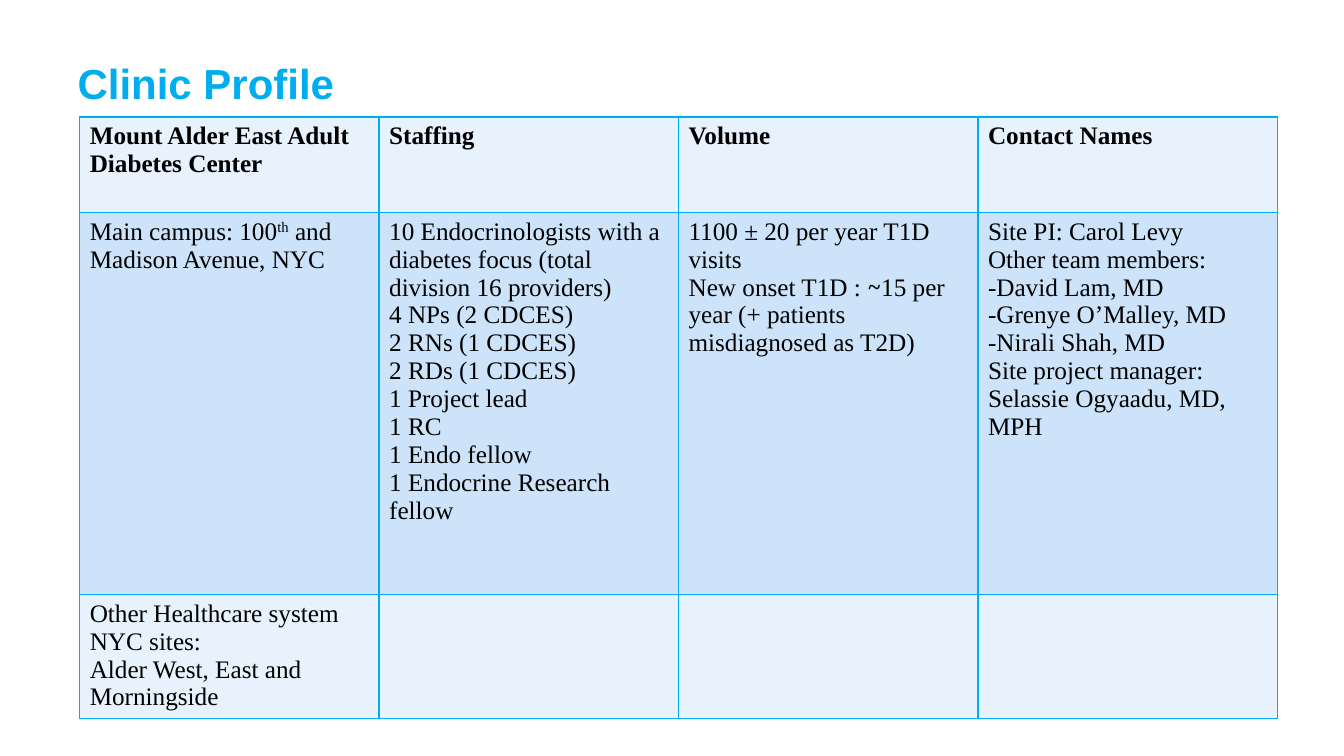
"""Build the clinic profile slide with its staffing, volume and contact table."""
from dataclasses import dataclass

from lxml import etree
from pptx import Presentation
from pptx.dml.color import RGBColor
from pptx.enum.text import MSO_ANCHOR, PP_ALIGN
from pptx.oxml.ns import qn
from pptx.slide import Slide
from pptx.table import _Cell
from pptx.text.text import _Paragraph
from pptx.util import Inches, Pt

LEFT = PP_ALIGN.LEFT
MIDDLE = MSO_ANCHOR.MIDDLE
TITLE_ONLY = 5
BORDER_SIDES = ("a:lnL", "a:lnR", "a:lnT", "a:lnB")


@dataclass(frozen=True)
class Theme:
    accent: str = "00AEEF"
    ink: str = "000000"
    light_band: str = "E7F2FC"
    dark_band: str = "CCE3F9"
    title_font: str = "Arial"
    table_font: str = "Times New Roman"
    title_size: int = 30
    table_size: int = 18
    border: int = 1


@dataclass(frozen=True)
class Span:
    text: str
    superscript: bool = False


@dataclass(frozen=True)
class Row:
    height: float
    fill: str
    cells: tuple[tuple[tuple[Span, ...], ...], ...]
    bold: bool = False


def lines(*texts: str) -> tuple[tuple[Span, ...], ...]:
    return tuple((Span(text),) for text in texts)


THEME = Theme()
COLUMN_WIDTH = 2.97
ROWS = (
    Row(0.95, THEME.light_band, (
        lines("Mount Alder East Adult Diabetes Center"),
        lines("Staffing"),
        lines("Volume"),
        lines("Contact Names"),
    ), bold=True),
    Row(3.79, THEME.dark_band, (
        ((Span("Main campus: 100"), Span("th", superscript=True),
          Span(" and Madison Avenue, NYC")),),
        lines(
            "10 Endocrinologists with a diabetes focus (total division 16 providers)",
            "4 NPs (2 CDCES)",
            "2 RNs (1 CDCES)",
            "2 RDs (1 CDCES)",
            "1 Project lead",
            "1 RC",
            "1 Endo fellow",
            "1 Endocrine Research fellow",
        ),
        lines(
            "1100 ± 20 per year T1D visits",
            "New onset T1D : ⁓15 per year (+ patients misdiagnosed as T2D)",
        ),
        lines(
            "Site PI: Carol Levy",
            "Other team members:",
            "-David Lam, MD",
            "-Grenye O’Malley, MD",
            "-Nirali Shah, MD",
            "Site project manager: Selassie Ogyaadu, MD, MPH",
        ),
    )),
    Row(1.23, THEME.light_band, (
        lines("Other Healthcare system NYC sites:",
              "Alder West, East and Morningside"),
        (), (), (),
    )),
)


def add_span(para: _Paragraph, span: Span, font: str, size: int, color: str,
             bold: bool) -> None:
    run = para.add_run()
    run.text = span.text
    run.font.name = font
    run.font.size = Pt(size)
    run.font.bold = bold
    run.font.color.rgb = RGBColor.from_string(color)
    if span.superscript:
        run._r.get_or_add_rPr().set("baseline", "30000")


def add_borders(cell: _Cell) -> None:
    properties = cell._tc.get_or_add_tcPr()
    for side in BORDER_SIDES:
        line = etree.SubElement(properties, qn(side), w=str(Pt(THEME.border)))
        fill = etree.SubElement(line, qn("a:solidFill"))
        etree.SubElement(fill, qn("a:srgbClr"), val=THEME.accent)


def fill_cell(cell: _Cell, paragraphs: tuple[tuple[Span, ...], ...], row: Row) -> None:
    add_borders(cell)
    cell.fill.solid()
    cell.fill.fore_color.rgb = RGBColor.from_string(row.fill)
    frame = cell.text_frame
    for index, spans in enumerate(paragraphs):
        para = frame.add_paragraph() if index else frame.paragraphs[0]
        for span in spans:
            add_span(para, span, THEME.table_font, THEME.table_size, THEME.ink, row.bold)


def add_title(page: Slide, text: str) -> None:
    box = page.shapes.title
    box.left, box.top = Inches(0.67), Inches(0.48)
    box.width, box.height = Inches(12), Inches(0.68)
    box.text_frame.vertical_anchor = MIDDLE
    para = box.text_frame.paragraphs[0]
    para.alignment = LEFT
    add_span(para, Span(text), THEME.title_font, THEME.title_size, THEME.accent, True)


def add_profile_table(page: Slide) -> None:
    column_count = len(ROWS[0].cells)
    table = page.shapes.add_table(
        len(ROWS), column_count, Inches(0.79), Inches(1.16),
        Inches(COLUMN_WIDTH * column_count), Inches(sum(row.height for row in ROWS)),
    ).table
    table.first_row = False
    table.horz_banding = False
    for column in table.columns:
        column.width = Inches(COLUMN_WIDTH)
    for row_index, row in enumerate(ROWS):
        table.rows[row_index].height = Inches(row.height)
        for column_index, paragraphs in enumerate(row.cells):
            fill_cell(table.cell(row_index, column_index), paragraphs, row)


def main() -> None:
    deck = Presentation()
    deck.slide_width, deck.slide_height = Inches(13.33), Inches(7.5)
    page = deck.slides.add_slide(deck.slide_layouts[TITLE_ONLY])
    add_title(page, "Clinic Profile")
    add_profile_table(page)
    deck.save("out.pptx")


if __name__ == "__main__":
    main()
